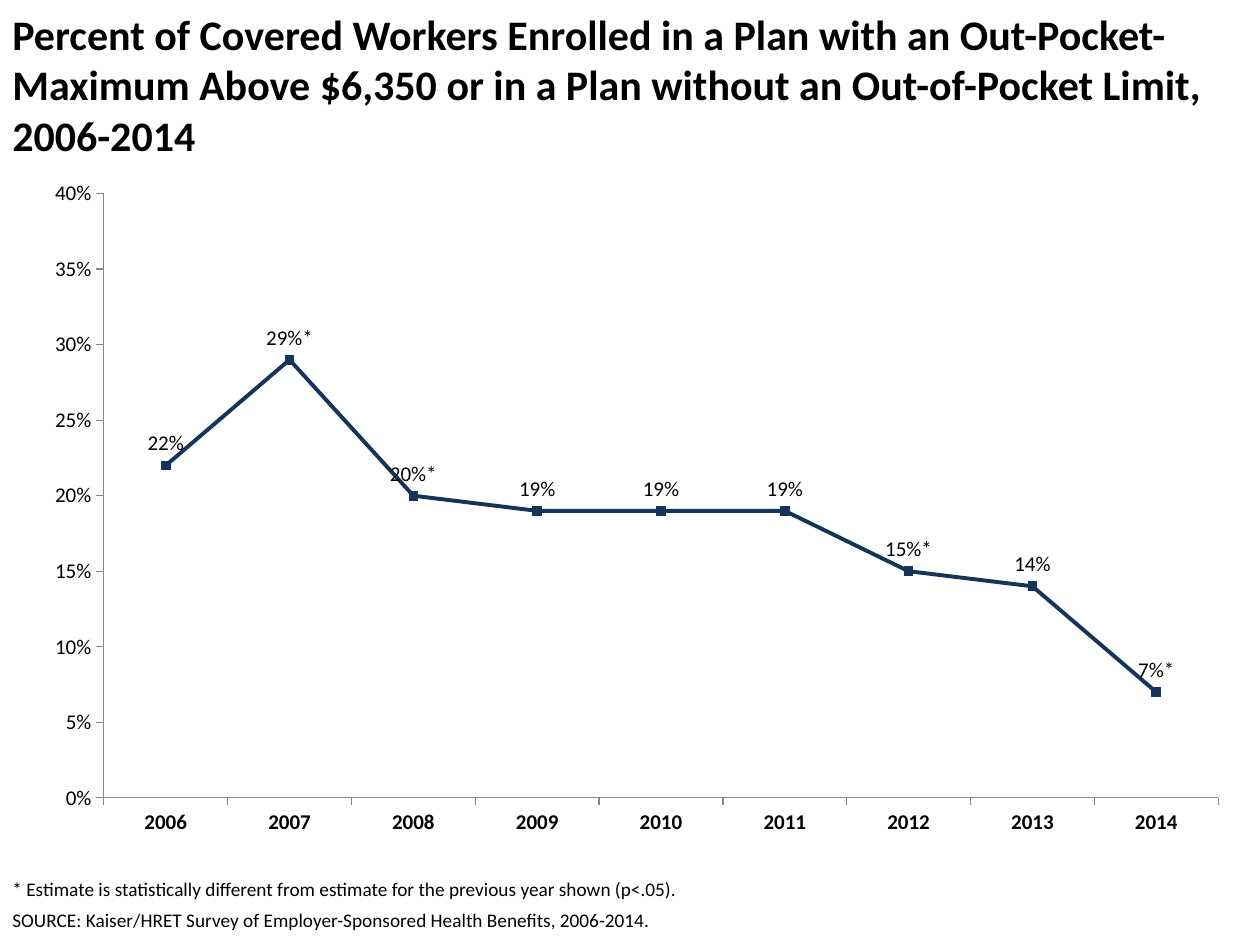
from dataclasses import dataclass

import pptx
import pptx.chart.data
import pptx.dml.color
import pptx.enum.chart
import pptx.enum.text
import pptx.oxml
import pptx.oxml.ns
import pptx.util

Pt = pptx.util.Pt
RGB = pptx.dml.color.RGBColor


@dataclass(frozen=True)
class Theme:
    font: str = "Calibri"
    text: RGB = RGB(0, 0, 0)
    trend: RGB = RGB(0x13, 0x35, 0x59)
    axis: RGB = RGB(0x86, 0x86, 0x86)
    title_size: int = 24
    chart_size: int = 12
    note_size: int = 11


THEME = Theme()

TITLE = ("Percent of Covered Workers Enrolled in a Plan with an Out-Pocket-Maximum "
         "Above $6,350 or in a Plan without an Out-of-Pocket Limit, 2006-2014")
NOTES = [
    "* Estimate is statistically different from estimate for the previous year shown (p<.05).",
    "SOURCE: Kaiser/HRET Survey of Employer-Sponsored Health Benefits, 2006-2014.",
]
YEARS = [str(year) for year in range(2006, 2015)]
SHARES = [0.22, 0.29, 0.20, 0.19, 0.19, 0.19, 0.15, 0.14, 0.07]
SIGNIFICANT_YEARS = ["2007", "2008", "2012", "2014"]
LABEL_SHIFTS = {"2008": (0.005, -0.011)}


def style_font(font, size, bold=False):
    font.name = THEME.font
    font.size = Pt(size)
    font.bold = bold
    font.color.rgb = THEME.text


def add_text(slide, box, paragraphs, size, bold=False, space_after=0,
             anchor=pptx.enum.text.MSO_ANCHOR.TOP):
    frame = slide.shapes.add_textbox(*map(Pt, box)).text_frame
    frame.word_wrap = True
    frame.vertical_anchor = anchor
    frame.text = "\n".join(paragraphs)
    for paragraph in frame.paragraphs:
        paragraph.space_after = Pt(space_after)
        for run in paragraph.runs:
            style_font(run.font, size, bold)


def manual_layout(**settings):
    """Return a c:layout element; settings are its children in schema order."""
    children = "".join(f'<c:{tag} val="{value}"/>' for tag, value in settings.items())
    return pptx.oxml.parse_xml(
        f'<c:layout {pptx.oxml.ns.nsdecls("c")}><c:manualLayout>{children}'
        "</c:manualLayout></c:layout>")


def place_plot(chart, x, y, w, h):
    plot_area = chart.plots[0]._element.getparent()
    for layout in plot_area.findall(pptx.oxml.ns.qn("c:layout")):
        plot_area.remove(layout)
    plot_area.insert(0, manual_layout(layoutTarget="inner", xMode="edge", yMode="edge",
                                      x=x, y=y, w=w, h=h))


def style_axes(chart):
    for axis, bold in ((chart.category_axis, True), (chart.value_axis, False)):
        axis.has_major_gridlines = False
        axis.major_tick_mark = pptx.enum.chart.XL_TICK_MARK.OUTSIDE
        axis.minor_tick_mark = pptx.enum.chart.XL_TICK_MARK.NONE
        axis.format.line.color.rgb = THEME.axis
        axis.format.line.width = Pt(0.75)
        style_font(axis.tick_labels.font, THEME.chart_size, bold)
    share_axis = chart.value_axis
    share_axis.minimum_scale = 0
    share_axis.maximum_scale = 0.4
    share_axis.major_unit = 0.05
    share_axis.tick_labels.number_format = "0%"
    share_axis.tick_labels.number_format_is_linked = False


def style_trend(trend):
    trend.smooth = False
    trend.format.line.color.rgb = THEME.trend
    trend.format.line.width = Pt(2.25)
    marker = trend.marker
    marker.style = pptx.enum.chart.XL_MARKER_STYLE.SQUARE
    marker.size = 5
    marker.format.fill.solid()
    marker.format.fill.fore_color.rgb = THEME.trend
    marker.format.line.color.rgb = THEME.trend


def label_trend(trend):
    """Show every share above its point, with an asterisk on significant changes."""
    above = pptx.enum.chart.XL_LABEL_POSITION.ABOVE
    labels = trend.data_labels
    labels.show_value = True
    labels.number_format = "0%"
    labels.number_format_is_linked = False
    labels.position = above
    style_font(labels.font, THEME.chart_size)
    for year in SIGNIFICANT_YEARS:
        index = YEARS.index(year)
        label = trend.points[index].data_label
        label.text_frame.text = f"{SHARES[index]:.0%}*"
        style_font(label.text_frame.paragraphs[0].runs[0].font, THEME.chart_size)
        label.position = above
        if year in LABEL_SHIFTS:
            x, y = LABEL_SHIFTS[year]
            rich_text = label.text_frame._txBody.getparent().getparent()
            rich_text.addprevious(manual_layout(x=x, y=y))


def add_trend_chart(slide, box):
    data = pptx.chart.data.CategoryChartData(number_format="0%")
    data.categories = YEARS
    data.add_series("Series 1", SHARES)
    chart = slide.shapes.add_chart(
        pptx.enum.chart.XL_CHART_TYPE.LINE_MARKERS, *map(Pt, box), data).chart
    chart.has_legend = False
    chart.has_title = False
    style_font(chart.font, THEME.chart_size)
    chart.plots[0].vary_by_categories = False
    place_plot(chart, 0.068, 0.037, 0.915, 0.872)
    style_axes(chart)
    trend = chart.plots[0].series[0]
    style_trend(trend)
    label_trend(trend)


def main():
    deck = pptx.Presentation()
    deck.slide_width, deck.slide_height = Pt(720), Pt(540)
    slide = deck.slides.add_slide(deck.slide_layouts[6])
    add_text(slide, (0, 0, 720, 96), [TITLE], THEME.title_size, bold=True,
             anchor=pptx.enum.text.MSO_ANCHOR.MIDDLE)
    add_trend_chart(slide, (12, 96, 696, 396))
    add_text(slide, (0, 498, 667.5, 38), NOTES, THEME.note_size, space_after=4)
    deck.save("out.pptx")


if __name__ == "__main__":
    main()
